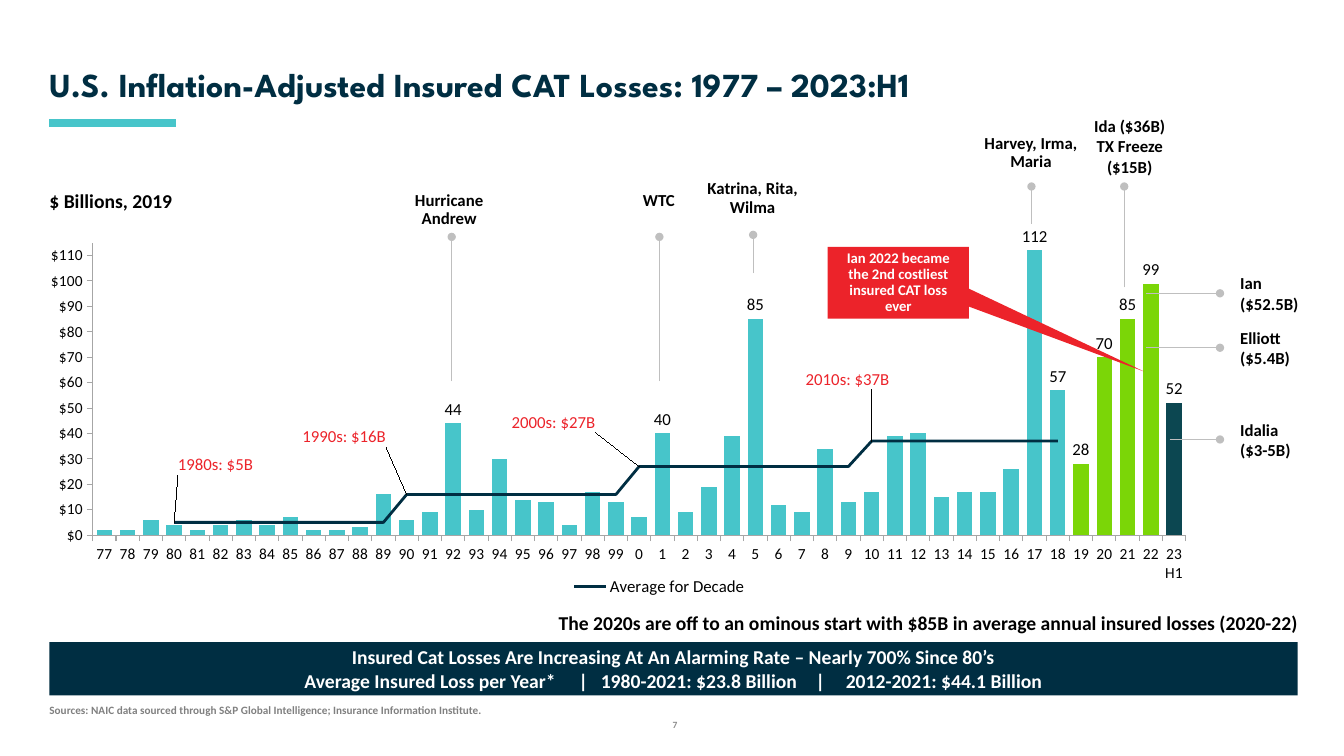
import dataclasses

import pptx
import pptx.chart.data
import pptx.dml.color
import pptx.enum.chart
import pptx.enum.shapes
import pptx.enum.text
import pptx.oxml
import pptx.oxml.ns
import pptx.util

Inches = pptx.util.Inches
Pt = pptx.util.Pt
Align = pptx.enum.text.PP_ALIGN
Anchor = pptx.enum.text.MSO_ANCHOR
EDGES = '<c:xMode val="edge"/><c:yMode val="edge"/>'
NO_LEADERS = (
    '<c:extLst><c:ext uri="{CE6537A1-D6FC-4f65-9D91-7224C49458BB}" '
    'xmlns:c15="http://schemas.microsoft.com/office/drawing/2012/chart">'
    '<c15:showLeaderLines val="0"/></c:ext></c:extLst>'
)


@dataclasses.dataclass(frozen=True)
class Theme:
    body_font: str = "Calibri"
    title_font: str = "League Spartan"
    navy: str = "002E42"
    teal: str = "47C5CA"
    green: str = "7BD607"
    dark_teal: str = "0C4751"
    red: str = "EC232A"
    black: str = "000000"
    white: str = "FFFFFF"
    axis_gray: str = "A6A6A6"
    leader_gray: str = "BFBFBF"
    source_gray: str = "808080"
    number_gray: str = "8C8C8C"
    title_size: float = 24
    heading_size: float = 14
    label_size: float = 12
    axis_size: float = 11
    callout_size: float = 10.5
    source_size: float = 8
    number_size: float = 6.8


def rgb(color):
    return pptx.dml.color.RGBColor.from_string(color)


def chart_xml(markup):
    return pptx.oxml.parse_xml(markup.replace(">", f' {pptx.oxml.ns.nsdecls("c")}>', 1))


def manual_layout(box, place, modes=""):
    parts = "".join(f'<c:{name} val="{length / box[2 + index % 2]}"/>'
                    for index, (name, length) in enumerate(zip("xywh", place)))
    return chart_xml(f"<c:layout><c:manualLayout>{modes}{parts}</c:manualLayout></c:layout>")


class SlideBuilder:
    def __init__(self, slide, theme):
        self.slide = slide
        self.theme = theme

    def style_font(self, font, size, color, bold=False, name=None):
        font.name = name or self.theme.body_font
        font.size = Pt(size)
        font.bold = bold
        font.color.rgb = rgb(color)

    def fill_text(self, shape, paragraphs, size, color, align=Align.LEFT, anchor=Anchor.TOP,
                  insets=(0, 0, 0, 0), spacing=None, font=None):
        frame = shape.text_frame
        frame.word_wrap = True
        frame.vertical_anchor = anchor
        frame.margin_left, frame.margin_top, frame.margin_right, frame.margin_bottom = map(Inches, insets)
        for index, lines in enumerate(paragraphs):
            paragraph = frame.add_paragraph() if index else frame.paragraphs[0]
            paragraph.alignment = align
            if spacing:
                paragraph.line_spacing = spacing
            for number, line in enumerate(lines.split("\n")):
                if number:
                    paragraph.add_line_break()
                run = paragraph.add_run()
                run.text = line
                self.style_font(run.font, size, color, True, font)

    def text(self, box, paragraphs, size, color=None, **options):
        shape = self.slide.shapes.add_textbox(*map(Inches, box))
        self.fill_text(shape, paragraphs, size, color or self.theme.black, **options)

    def block(self, kind, box, fill, paragraphs, size, **options):
        shape = self.slide.shapes.add_shape(kind, *map(Inches, box))
        shape.shadow.inherit = False
        shape.fill.solid()
        shape.fill.fore_color.rgb = rgb(fill)
        shape.line.fill.background()
        self.fill_text(shape, paragraphs, size, self.theme.white, align=Align.CENTER,
                       anchor=Anchor.MIDDLE, **options)
        return shape

    def line(self, start, end, color, width, dot=False):
        connector = self.slide.shapes.add_connector(
            pptx.enum.shapes.MSO_CONNECTOR.STRAIGHT, *map(Inches, (*start, *end)))
        connector.line.color.rgb = rgb(color)
        connector.line.width = Pt(width)
        drawing = pptx.oxml.ns.nsdecls("a")
        if dot:
            connector.line._get_or_add_ln().append(pptx.oxml.parse_xml(f'<a:tailEnd {drawing} type="oval"/>'))
        connector._element.spPr.append(pptx.oxml.parse_xml(f"<a:effectLst {drawing}/>"))

    def event(self, box, paragraphs, start, end, **options):
        self.text(box, paragraphs, self.theme.label_size, **options)
        self.line(start, end, self.theme.leader_gray, 0.5, dot=True)

    def loss_chart(self, box, categories, losses, averages, bar_labels, bar_colors, decade_labels):
        theme = self.theme
        data = pptx.chart.data.CategoryChartData()
        data.categories = categories
        data.add_series("Series 1", losses)
        data.add_series("Average for Decade", averages)
        chart = self.slide.shapes.add_chart(
            pptx.enum.chart.XL_CHART_TYPE.COLUMN_CLUSTERED, *map(Inches, box), data).chart
        chart.has_title = False
        self.style_font(chart.font, theme.label_size, theme.black)
        self.split_line_plot(chart, box)
        self.style_axes(chart)

        bar_plot, line_plot = chart.plots
        bar_plot.gap_width = 50
        bar_plot.vary_by_categories = False
        bars = bar_plot.series[0]
        bars.format.fill.solid()
        bars.format.fill.fore_color.rgb = rgb(theme.teal)
        for index, color in bar_colors.items():
            fill = bars.points[index].format.fill
            fill.solid()
            fill.fore_color.rgb = rgb(color)
        for index in bar_labels:
            label = bars.points[index].data_label
            self.style_font(label.font, theme.label_size, theme.black)
            label.position = pptx.enum.chart.XL_LABEL_POSITION.OUTSIDE_END
        bars.data_labels.show_value = False

        average = line_plot.series[0]
        average.smooth = False
        average.marker.style = pptx.enum.chart.XL_MARKER_STYLE.NONE
        average.format.line.color.rgb = rgb(theme.navy)
        average.format.line.width = Pt(2)
        for index, (words, _) in decade_labels.items():
            label = average.points[index].data_label
            run = label.text_frame.paragraphs[0].add_run()
            run.text = words
            self.style_font(run.font, theme.label_size, theme.red)
            label.position = pptx.enum.chart.XL_LABEL_POSITION.ABOVE
        average.data_labels.show_value = False
        labels = average._element.xpath("./c:dLbls")[0]
        for element, (_, offset) in zip(labels.xpath("./c:dLbl"), decade_labels.values()):
            element.xpath("./c:idx")[0].addnext(manual_layout(box, offset))
        labels.append(chart_xml(NO_LEADERS))

        chart.has_legend = True
        chart.legend.position = pptx.enum.chart.XL_LEGEND_POSITION.BOTTOM
        chart.legend.include_in_layout = False
        self.style_font(chart.legend.font, theme.label_size, theme.black)
        legend = chart.legend._element
        for element in legend.xpath("./c:layout"):
            legend.remove(element)
        position = legend.xpath("./c:legendPos")[0]
        position.addnext(manual_layout(box, (5.19, 3.46), EDGES))
        position.addnext(chart_xml('<c:legendEntry><c:idx val="0"/><c:delete val="1"/></c:legendEntry>'))

    def split_line_plot(self, chart, box):
        area = chart._chartSpace.xpath(".//c:plotArea")[0]
        bar_chart = area.xpath("./c:barChart")[0]
        series = bar_chart.xpath("./c:ser")[1]
        for element in series.xpath("./c:invertIfNegative"):
            series.remove(element)
        axes = "".join(f'<c:axId val="{axis.get("val")}"/>' for axis in bar_chart.xpath("./c:axId"))
        line_chart = chart_xml('<c:lineChart><c:grouping val="standard"/><c:varyColors val="0"/>'
                               f'<c:marker val="1"/>{axes}</c:lineChart>')
        line_chart.insert(2, series)
        bar_chart.addnext(line_chart)
        for element in area.xpath("./c:layout"):
            area.remove(element)
        area.insert(0, manual_layout(box, (0.47, 0.19, 10.84, 2.9), '<c:layoutTarget val="inner"/>' + EDGES))

    def style_axes(self, chart):
        formats = {chart.category_axis: "#,##0", chart.value_axis: '"$"#,##0'}
        for axis, number_format in formats.items():
            axis.has_major_gridlines = False
            axis.major_tick_mark = pptx.enum.chart.XL_TICK_MARK.OUTSIDE
            axis.minor_tick_mark = pptx.enum.chart.XL_TICK_MARK.NONE
            axis.format.line.color.rgb = rgb(self.theme.axis_gray)
            axis.format.line.width = Pt(0.75)
            self.style_font(axis.tick_labels.font, self.theme.axis_size, self.theme.black)
            axis.tick_labels.number_format = number_format
            axis.tick_labels.number_format_is_linked = False
        chart.category_axis.tick_label_position = pptx.enum.chart.XL_TICK_LABEL_POSITION.LOW
        chart.value_axis.minimum_scale = 0
        chart.value_axis.maximum_scale = 115
        chart.value_axis.major_unit = 10


def main():
    presentation = pptx.Presentation()
    presentation.slide_width, presentation.slide_height = Inches(13.33), Inches(7.5)
    theme = Theme()
    builder = SlideBuilder(presentation.slides.add_slide(presentation.slide_layouts[6]), theme)

    builder.text((5.57, 7.08, 2.25, 0.2), ["7"], theme.number_size, theme.number_gray,
                 align=Align.CENTER, insets=(0.1, 0.05, 0.1, 0.05))
    losses = [2, 2, 6, 4, 2, 4, 6, 4, 7, 2, 2, 3, 16, 6, 9, 44, 10, 30, 14, 13, 4, 17, 13, 7,
              40, 9, 19, 39, 85, 12, 9, 34, 13, 17, 39, 40, 15, 17, 17, 26, 112, 57, 28, 70, 85, 99, 52]
    averages = [None] * 3 + [5] * 10 + [16] * 10 + [27] * 10 + [37] * 9 + [None] * 5
    builder.loss_chart(
        (0.45, 2.22, 11.4, 3.8),
        [str(year % 100) for year in range(1977, 2023)] + ["23 H1"],
        losses, averages,
        bar_labels=[15, 24, 28, *range(40, 47)],
        bar_colors={**dict.fromkeys(range(42, 46), theme.green), 46: theme.dark_teal},
        decade_labels={3: ("1980s: $5B", (0.41, -0.43)), 13: ("1990s: $16B", (-0.62, -0.43)),
                       23: ("2000s: $27B", (-0.85, -0.3)), 33: ("2010s: $37B", (-0.24, -0.47))})

    callout = builder.block(
        pptx.enum.shapes.MSO_SHAPE.RECTANGULAR_CALLOUT, (8.21, 2.45, 1.4, 0.71), theme.red,
        ["Ian 2022 became the 2nd costliest insured CAT loss ever"], theme.callout_size,
        insets=(0.1, 0, 0.1, 0), spacing=0.9)
    callout.adjustments[0], callout.adjustments[1] = 1.74, 1.24

    builder.text((0.49, 1.87, 1.3, 0.24), ["$ Billions, 2019"], theme.heading_size)
    builder.text((0.49, 0.63, 12.49, 0.46), ["U.S. Inflation-Adjusted Insured CAT Losses: 1977 – 2023:H1"],
                 theme.title_size, theme.navy, anchor=Anchor.BOTTOM, insets=(0, 0.05, 0.1, 0.05),
                 spacing=0.9, font=theme.title_font)
    builder.line((0.49, 1.22), (1.75, 1.22), theme.teal, 6)

    banner = builder.block(
        pptx.enum.shapes.MSO_SHAPE.RECTANGLE, (0.49, 6.37, 12.38, 0.53), theme.navy,
        ["Insured Cat Losses Are Increasing At An Alarming Rate – Nearly 700% Since 80’s",
         "\tAverage Insured Loss per Year*\t|\t1980-2021: $23.8 Billion\t|\t2012-2021: $44.1 Billion"],
        theme.heading_size, insets=(0.1, 0.05, 0.1, 0.05))
    figures = banner.text_frame.paragraphs[1]
    figures.alignment = Align.LEFT
    stops = "".join(f'<a:tab pos="{Inches(stop)}" algn="l"/>' for stop in (2.43, 5.15, 5.37, 7.5, 7.8))
    figures._p.get_or_add_pPr().append(
        pptx.oxml.parse_xml(f'<a:tabLst {pptx.oxml.ns.nsdecls("a")}>{stops}</a:tabLst>'))

    builder.text((0.49, 7, 9.45, 0.12),
                 ["Sources: NAIC data sourced through S&P Global Intelligence; Insurance Information Institute."],
                 theme.source_size, theme.source_gray, spacing=0.85)

    for words, left, top, x, bottom, dot in [
        ("Hurricane\nAndrew", 3.9, 1.9, 4.48, 3.78, 2.35),
        ("WTC", 5.98, 1.9, 6.54, 3.78, 2.35),
        ("Katrina, Rita, Wilma", 6.91, 1.79, 7.47, 2.71, 2.33),
        ("Harvey, Irma, Maria", 9.67, 1.34, 10.23, 2.22, 1.85),
    ]:
        builder.event((left, top, 1.11, 0.36), [words], (x, bottom), (x, dot), align=Align.CENTER, spacing=0.9)
    builder.event((10.75, 1.15, 0.91, 0.61), ["Ida ($36B)", "TX Freeze ($15B)"],
                  (11.15, 2.85), (11.15, 1.85), align=Align.CENTER)
    for words, x, y in [("Ian\n($52.5B)", 11.37, 2.91), ("Elliott\n($5.4B)", 11.37, 3.45),
                        ("Idalia\n($3-5B)", 11.6, 4.36)]:
        builder.event((12.3, y - 0.2, 0.8, 0.4), [words], (x, y), (12.1, y))

    builder.text((5.54, 6.06, 7.42, 0.24),
                 ["The 2020s are off to an ominous start with $85B in average annual insured losses (2020-22)"],
                 theme.heading_size)
    presentation.save("out.pptx")


if __name__ == "__main__":
    main()
